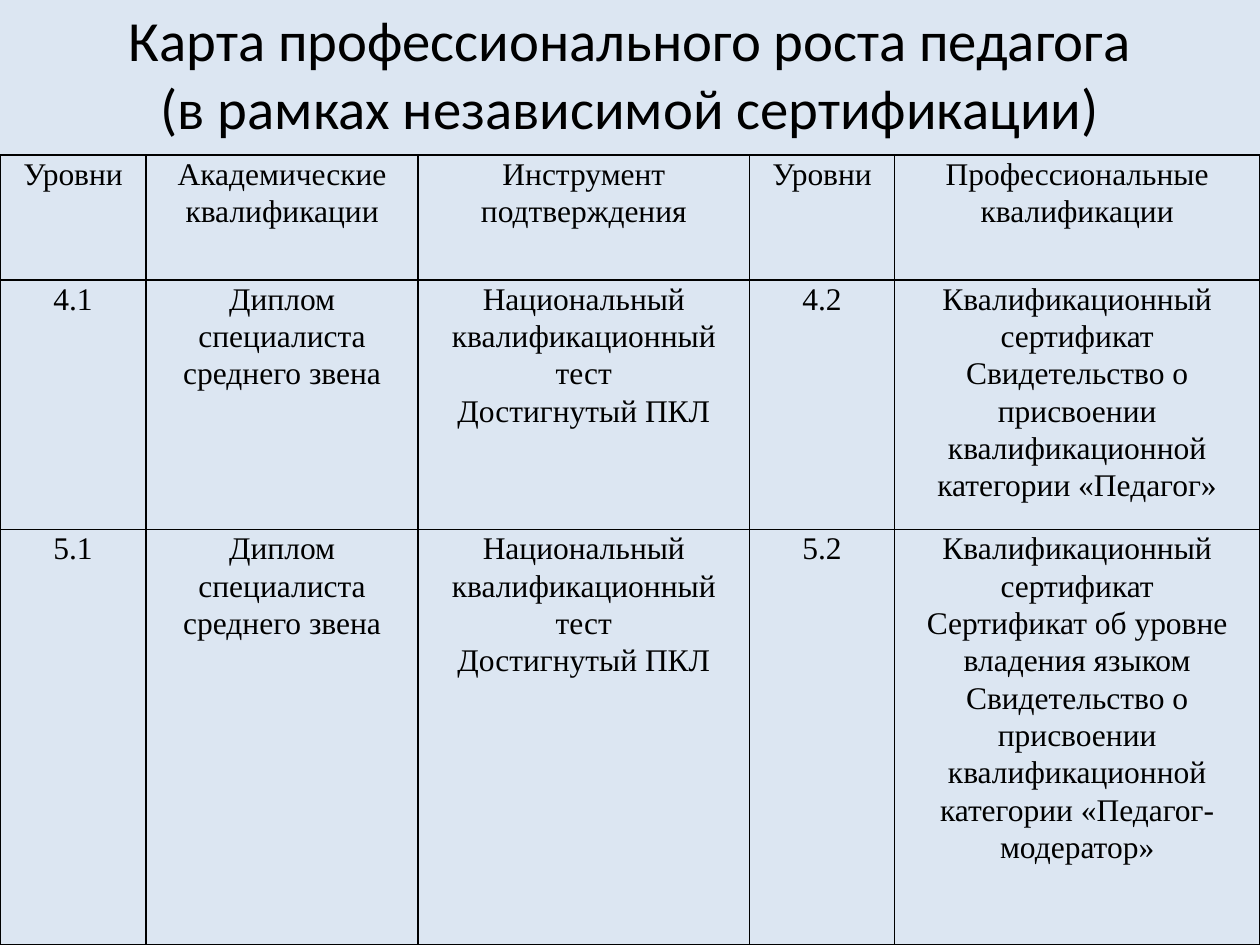
from dataclasses import dataclass

from lxml.etree import SubElement
from pptx import Presentation
from pptx.dml.color import RGBColor
from pptx.enum.text import MSO_ANCHOR, PP_ALIGN
from pptx.oxml.ns import qn
from pptx.util import Pt


@dataclass(frozen=True)
class Theme:
    background: str = "DCE6F2"
    ink: str = "000000"
    title_font: str = "Calibri"
    title_size: float = 32.4
    table_font: str = "Times New Roman"
    table_size: float = 18
    table_spacing: float = 1.07
    border_width: float = 1


@dataclass(frozen=True)
class Column:
    heading: str
    width: float


@dataclass(frozen=True)
class Level:
    height: float
    entries: tuple[tuple[str, ...], ...]


THEME = Theme()
SLIDE_WIDTH, SLIDE_HEIGHT = 720, 540
TITLE_HEIGHT = 82.8
TABLE_TOP = 88.6
HEADING_HEIGHT = 71.3

TITLE = ("Карта профессионального роста педагога", "(в рамках независимой сертификации)")
COLUMNS = (
    Column("Уровни", 83.5),
    Column("Академические квалификации", 155.5),
    Column("Инструмент подтверждения", 189.4),
    Column("Уровни", 82.8),
    Column("Профессиональные квалификации", 208.8),
)
DIPLOMA = ("Диплом специалиста среднего звена",)
TEST = ("Национальный квалификационный тест", "Достигнутый ПКЛ")
CERTIFICATE = "Квалификационный сертификат"
CATEGORY = "Свидетельство о присвоении квалификационной категории «{}»"
LEVELS = (
    Level(142.6, (("4.1",), DIPLOMA, TEST, ("4.2",),
                  (CERTIFICATE, CATEGORY.format("Педагог")))),
    Level(237.6, (("5.1",), DIPLOMA, TEST, ("5.2",),
                  (CERTIFICATE, "Сертификат об уровне владения языком",
                   CATEGORY.format("Педагог-модератор")))),
)


def write_lines(frame, lines: tuple[str, ...], font: str, size: float,
                spacing: float = 1) -> None:
    for index, line in enumerate(lines):
        paragraph = frame.paragraphs[0] if index == 0 else frame.add_paragraph()
        paragraph.alignment = PP_ALIGN.CENTER
        paragraph.line_spacing = spacing
        run = paragraph.add_run()
        run.text = line
        run.font.name = font
        run.font.size = Pt(size)
        run.font.color.rgb = RGBColor.from_string(THEME.ink)


def add_borders(cell) -> None:
    properties = cell._tc.get_or_add_tcPr()
    for position, side in enumerate(("lnL", "lnR", "lnT", "lnB")):
        border = SubElement(properties, qn(f"a:{side}"), w=str(Pt(THEME.border_width)))
        fill = SubElement(border, qn("a:solidFill"))
        SubElement(fill, qn("a:srgbClr"), val=THEME.ink)
        properties.insert(position, border)  # borders come before the fill


def fill_cell(cell, lines: tuple[str, ...]) -> None:
    cell.margin_left = cell.margin_right = Pt(5)
    cell.margin_top = cell.margin_bottom = Pt(0)
    cell.fill.background()
    add_borders(cell)
    write_lines(cell.text_frame, lines, THEME.table_font, THEME.table_size,
                THEME.table_spacing)


def add_title(slide) -> None:
    title = slide.shapes.add_textbox(Pt(0), Pt(0), Pt(SLIDE_WIDTH), Pt(TITLE_HEIGHT))
    frame = title.text_frame
    frame.word_wrap = True
    frame.vertical_anchor = MSO_ANCHOR.MIDDLE
    write_lines(frame, TITLE, THEME.title_font, THEME.title_size)


def add_growth_map(slide) -> None:
    headings = Level(HEADING_HEIGHT, tuple((column.heading,) for column in COLUMNS))
    levels = (headings, *LEVELS)
    growth_map = slide.shapes.add_table(
        len(levels), len(COLUMNS), Pt(0), Pt(TABLE_TOP), Pt(SLIDE_WIDTH),
        Pt(sum(level.height for level in levels))).table
    growth_map.first_row = False
    growth_map.horz_banding = False
    for index, column in enumerate(COLUMNS):
        growth_map.columns[index].width = Pt(column.width)
    for row, level in enumerate(levels):
        growth_map.rows[row].height = Pt(level.height)
        for index, lines in enumerate(level.entries):
            fill_cell(growth_map.cell(row, index), lines)


def main() -> None:
    deck = Presentation()
    deck.slide_width, deck.slide_height = Pt(SLIDE_WIDTH), Pt(SLIDE_HEIGHT)
    slide = deck.slides.add_slide(deck.slide_layouts[6])

    # Background
    background = slide.background.fill
    background.solid()
    background.fore_color.rgb = RGBColor.from_string(THEME.background)

    # Title and table of qualification levels
    add_title(slide)
    add_growth_map(slide)
    deck.save("out.pptx")


if __name__ == "__main__":
    main()
